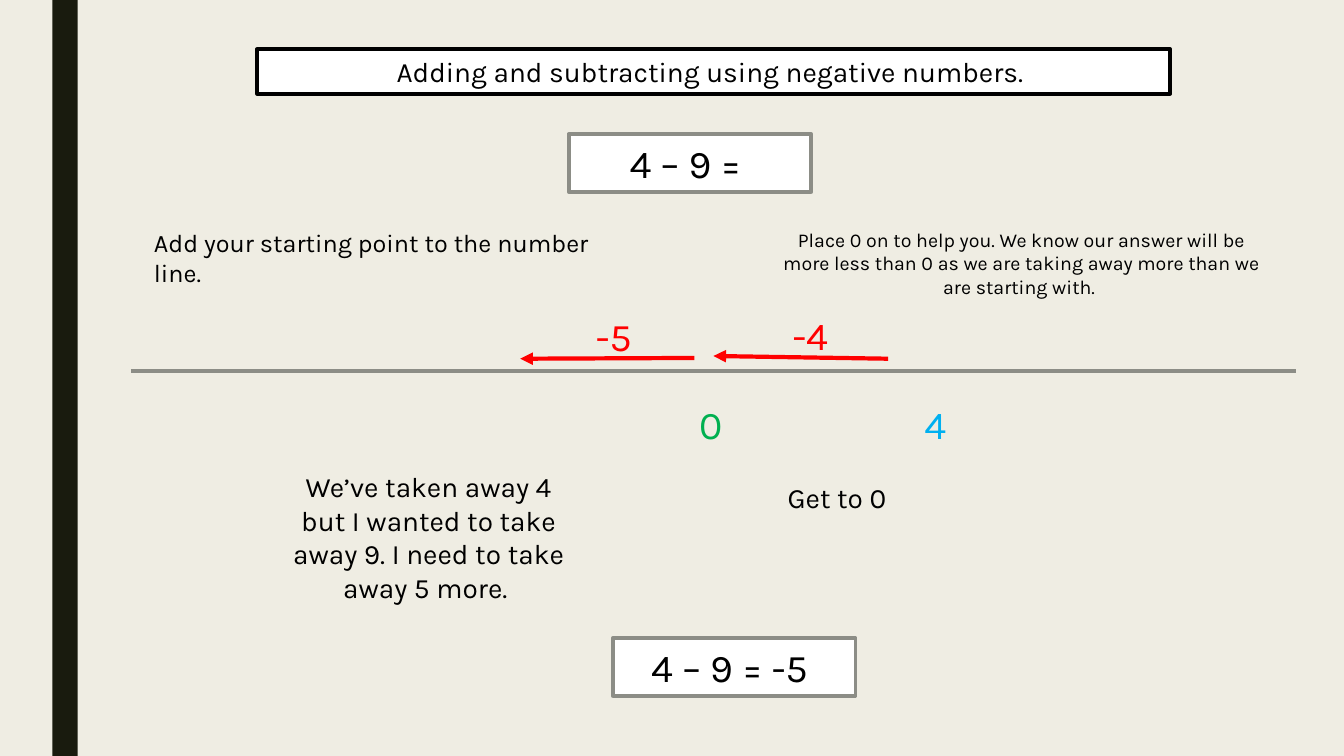
from lxml import etree
from pptx import Presentation
from pptx import util as u
from pptx.dml.color import RGBColor
from pptx.enum import shapes, text
from pptx.oxml import ns

HUES = {
    "page": "EFEDE3", "bar": "191B0E", "white": "FFFFFF", "black": "000000",
    "grey": "8C8D86", "red": "FF0000", "green": "00B050", "blue": "00B0F0",
}
FONT = "Karla"


def hue(name):
    return RGBColor.from_string(HUES[name])


def place(shape, box):
    shape.left, shape.top, shape.width, shape.height = map(u.Cm, box)


def paint(shape, fill, edge=None):
    shape.fill.solid()
    shape.fill.fore_color.rgb = hue(fill)
    if edge:
        shape.line.color.rgb = hue(edge)
        shape.line.width = u.Pt(2.75)
    else:
        shape.line.fill.background()


def write(shape, words, size, color="black", align="CENTER",
          anchor=text.MSO_ANCHOR.TOP):
    frame = shape.text_frame
    frame.word_wrap = True
    frame.auto_size = text.MSO_AUTO_SIZE.NONE
    frame.vertical_anchor = anchor
    frame.text = words
    line = frame.paragraphs[0]
    line.alignment = text.PP_ALIGN[align]
    line.font.name = FONT
    line.font.size = u.Pt(size)
    line.font.color.rgb = hue(color)


def add_rect(slide, box, fill, edge=None):
    rect = slide.shapes.add_shape(shapes.MSO_SHAPE.RECTANGLE, *map(u.Cm, box))
    rect.shadow.inherit = False
    paint(rect, fill, edge)
    return rect


def add_sum(slide, left, top, words):
    rect = add_rect(slide, (left, top, 6.12, 1.45), "white", "grey")
    write(rect, words, 28, anchor=text.MSO_ANCHOR.MIDDLE)


def add_note(slide, box, words, size, color="black", align="CENTER"):
    note = slide.shapes.add_textbox(*map(u.Cm, box))
    write(note, words, size, color, align)


def add_line(slide, start, end, color, arrow=False):
    line = slide.shapes.add_connector(
        shapes.MSO_CONNECTOR.STRAIGHT, *map(u.Cm, start + end))
    line.line.color.rgb = hue(color)
    line.line.width = u.Pt(3)
    if arrow:
        edge = line.line._get_or_add_ln()
        etree.SubElement(edge, ns.qn("a:tailEnd"), type="triangle")
    etree.SubElement(line._element.spPr, ns.qn("a:effectLst"))


def main():
    deck = Presentation()
    deck.slide_width, deck.slide_height = u.Cm(33.87), u.Cm(19.05)
    slide = deck.slides.add_slide(deck.slide_layouts[5])
    slide.background.fill.solid()
    slide.background.fill.fore_color.rgb = hue("page")

    add_rect(slide, (1.32, 0, 0.64, 19.05), "bar")
    title = slide.shapes.title
    place(title, (6.48, 1.24, 23.01, 1.12))
    paint(title, "white", "black")
    write(title, "Adding and subtracting using negative numbers. ", 20,
          anchor=text.MSO_ANCHOR.MIDDLE)

    add_sum(slide, 14.33, 3.38, "4 – 9 = ")
    add_sum(slide, 15.44, 16.08, "4 – 9 = -5 ")

    add_line(slide, (3.3, 9.35), (32.66, 9.35), "grey")
    add_line(slide, (22.38, 9.04), (17.98, 8.97), "red", True)
    add_line(slide, (17.5, 9.02), (13.11, 9.04), "red", True)

    for left, top, label, color in (
        (22.45, 9.96, "4", "blue"), (16.79, 9.96, "0", "green"),
        (19.3, 7.72, "-4", "red"), (14.35, 7.75, "-5", "red"),
    ):
        add_note(slide, (left, top, 2.24, 1.45), label, 28, color)

    add_note(slide, (3.63, 5.61, 11.89, 1.02),
             "Add your starting point to the number line.", 18, align="LEFT")
    add_note(slide, (19.28, 5.61, 12.93, 2.06),
             "Place 0 on to help you. We know our answer will be more less "
             "than 0 as we are taking away more than we are starting with. ",
             14)
    add_note(slide, (18.82, 11.99, 4.55, 1.12), "Get to 0", 20)
    add_note(slide, (6.93, 11.71, 7.75, 3.68),
             "We’ve taken away 4 but I wanted to take away 9. "
             "I need to take away 5 more. ", 20)

    deck.save("out.pptx")


if __name__ == "__main__":
    main()
